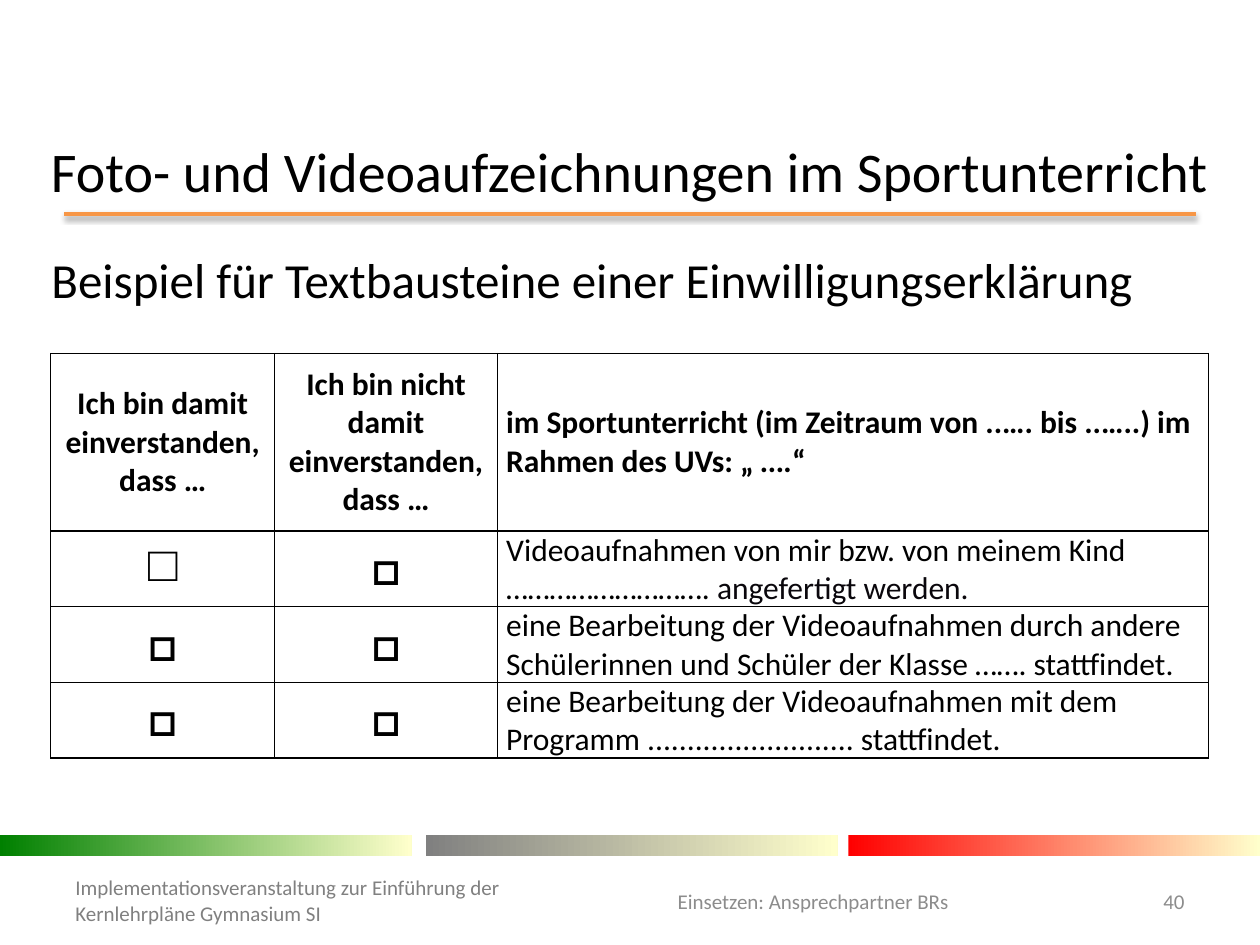
"""Build the slide on consent wording for photo and video recordings in PE lessons."""
from lxml import etree
from pptx import Presentation
from pptx.dml.color import RGBColor
from pptx.enum import shapes, text
from pptx.oxml import ns
from pptx.util import Pt

THEME = {
    "font": "Calibri", "box_font": "Courier New",
    "black": "000000", "ink": "0A070C", "white": "FFFFFF",
    "footer": "808080", "muted": "8C8C8C", "rule": "F79646", "cream": "FFFFCC",
    "title": 32, "subtitle": 28, "box": 28, "table": 18, "small": 12,
}
CENTER, LEFT, RIGHT = text.PP_ALIGN.CENTER, text.PP_ALIGN.LEFT, text.PP_ALIGN.RIGHT
MIDDLE, TOP = text.MSO_ANCHOR.MIDDLE, text.MSO_ANCHOR.TOP

# text, (left, top, width, height), size, colour, alignment, anchor
TEXTS = [
    ("Foto- und Videoaufzeichnungen im Sportunterricht",
     (0, 82.8, 720, 28.8), "title", "black", CENTER, MIDDLE),
    ("Implementationsveranstaltung zur Einführung der Kernlehrpläne Gymnasium SI",
     (36, 500.4, 290, 28), "small", "footer", LEFT, MIDDLE),
    ("Einsetzen: Ansprechpartner BRs",
     (348.5, 500.4, 232.5, 28.8), "small", "muted", CENTER, MIDDLE),
    ("40", (638, 500.4, 46, 28.8), "small", "muted", RIGHT, MIDDLE),
    ("Beispiel für Textbausteine einer Einwilligungserklärung",
     (22.3, 139, 675.4, 177), "subtitle", "black", LEFT, TOP),
]
BARS = [(0, "008000"), (243.5, "808080"), (484.8, "FF0000")]
BAR_TOP, BAR_WIDTH, BAR_HEIGHT = 477.4, 235.2, 11.5

# each cell is a list of runs: (text, format changes)
BOLD, ITALIC = {"bold": True}, {"bold": True, "italic": True}
CHECK = [("□", {"bold": True, "size": Pt(THEME["box"])})]
LIGHT_CHECK = [("□", {**CHECK[0][1], "name": THEME["box_font"]})]
ROWS = [
    [[("Ich bin damit einverstanden, dass …", BOLD)],
     [("Ich bin nicht damit einverstanden, dass …", BOLD)],
     [("im Sportunterricht (im Zeitraum von ..…. bis ..…..) im Rahmen des UVs: „ ", BOLD),
      ("….", ITALIC), ("“", BOLD)]],
    [LIGHT_CHECK, CHECK,
     [("Videoaufnahmen von mir bzw. von meinem Kind ………………………. ", {}),
      ("angefertigt werden.", {"color": "ink"})]],
    [CHECK, CHECK,
     [("eine Bearbeitung der Videoaufnahmen durch andere Schülerinnen und Schüler "
       "der Klasse ……. stattfindet.", {})]],
    [CHECK, CHECK,
     [("eine Bearbeitung der Videoaufnahmen mit dem Programm "
       ".......................... stattfindet.", {})]],
]
TABLE_LEFT, TABLE_TOP = 29, 202
COLUMN_WIDTHS = [128, 127.3, 406.3]
ROW_HEIGHTS = [101.5, 43.2, 43.2, 43.2]
CELL_FORMAT = {"vertical_anchor": MIDDLE, "margin_left": Pt(5), "margin_right": Pt(5),
               "margin_top": 0, "margin_bottom": 0}


def rgb(name):
    return RGBColor.from_string(THEME[name])


def add_run(paragraph, content, color="black", **changes):
    run = paragraph.add_run()
    run.text = content
    values = {"name": THEME["font"], "size": Pt(THEME["table"]), "bold": False,
              "italic": False, **changes}
    for key, value in values.items():
        setattr(run.font, key, value)
    run.font.color.rgb = rgb(color)


def add_text(slide, content, place, size, color, alignment, anchor):
    frame = slide.shapes.add_textbox(*map(Pt, place)).text_frame
    frame.word_wrap = True
    frame.vertical_anchor = anchor
    paragraph = frame.paragraphs[0]
    paragraph.alignment = alignment
    add_run(paragraph, content, color, size=Pt(THEME[size]))


def add_rule(slide):
    rule = slide.shapes.add_connector(
        shapes.MSO_CONNECTOR.STRAIGHT, Pt(36.7), Pt(122.4), Pt(683.3), Pt(122.4))
    rule.line.color.rgb = rgb("rule")
    rule.line.width = Pt(2)
    properties = rule.line._get_or_add_ln().getparent()
    properties.append(etree.fromstring(
        f'<a:effectLst {ns.nsdecls("a")}><a:outerShdw blurRad="{Pt(3.1)}" '
        f'dist="{Pt(1.6)}" dir="5400000" rotWithShape="0"><a:srgbClr val="{THEME["black"]}">'
        '<a:alpha val="38000"/></a:srgbClr></a:outerShdw></a:effectLst>'))


def add_bar(slide, left, color):
    bar = slide.shapes.add_shape(
        shapes.MSO_SHAPE.RECTANGLE, *map(Pt, (left, BAR_TOP, BAR_WIDTH, BAR_HEIGHT)))
    bar.shadow.inherit = False
    bar.line.fill.background()
    bar.fill.gradient()
    bar.fill.gradient_angle = 0
    for stop, position, value in zip(bar.fill.gradient_stops, (0, 1), (color, THEME["cream"])):
        stop.position = position
        stop.color.rgb = RGBColor.from_string(value)


def add_borders(cell):
    properties = cell._tc.get_or_add_tcPr()
    for side in "LRTB":
        properties.append(etree.fromstring(
            f'<a:ln{side} {ns.nsdecls("a")} w="{Pt(1)}"><a:solidFill>'
            f'<a:srgbClr val="{THEME["black"]}"/></a:solidFill></a:ln{side}>'))


def add_consent_table(slide):
    table = slide.shapes.add_table(
        len(ROWS), len(COLUMN_WIDTHS), Pt(TABLE_LEFT), Pt(TABLE_TOP),
        Pt(sum(COLUMN_WIDTHS)), Pt(sum(ROW_HEIGHTS))).table
    for column, width in zip(table.columns, COLUMN_WIDTHS):
        column.width = Pt(width)
    for row, height, contents in zip(table.rows, ROW_HEIGHTS, ROWS):
        row.height = Pt(height)
        for index, (cell, runs) in enumerate(zip(row.cells, contents)):
            for key, value in CELL_FORMAT.items():
                setattr(cell, key, value)
            add_borders(cell)
            cell.fill.solid()
            cell.fill.fore_color.rgb = rgb("white")
            paragraph = cell.text_frame.paragraphs[0]
            paragraph.alignment = CENTER if index < 2 else LEFT
            for content, changes in runs:
                add_run(paragraph, content, **changes)


def main():
    presentation = Presentation()
    presentation.slide_width, presentation.slide_height = Pt(720), Pt(540)
    slide = presentation.slides.add_slide(presentation.slide_layouts[6])
    add_rule(slide)
    for bar in BARS:
        add_bar(slide, *bar)
    for item in TEXTS:
        add_text(slide, *item)
    add_consent_table(slide)
    presentation.save("out.pptx")


if __name__ == "__main__":
    main()
